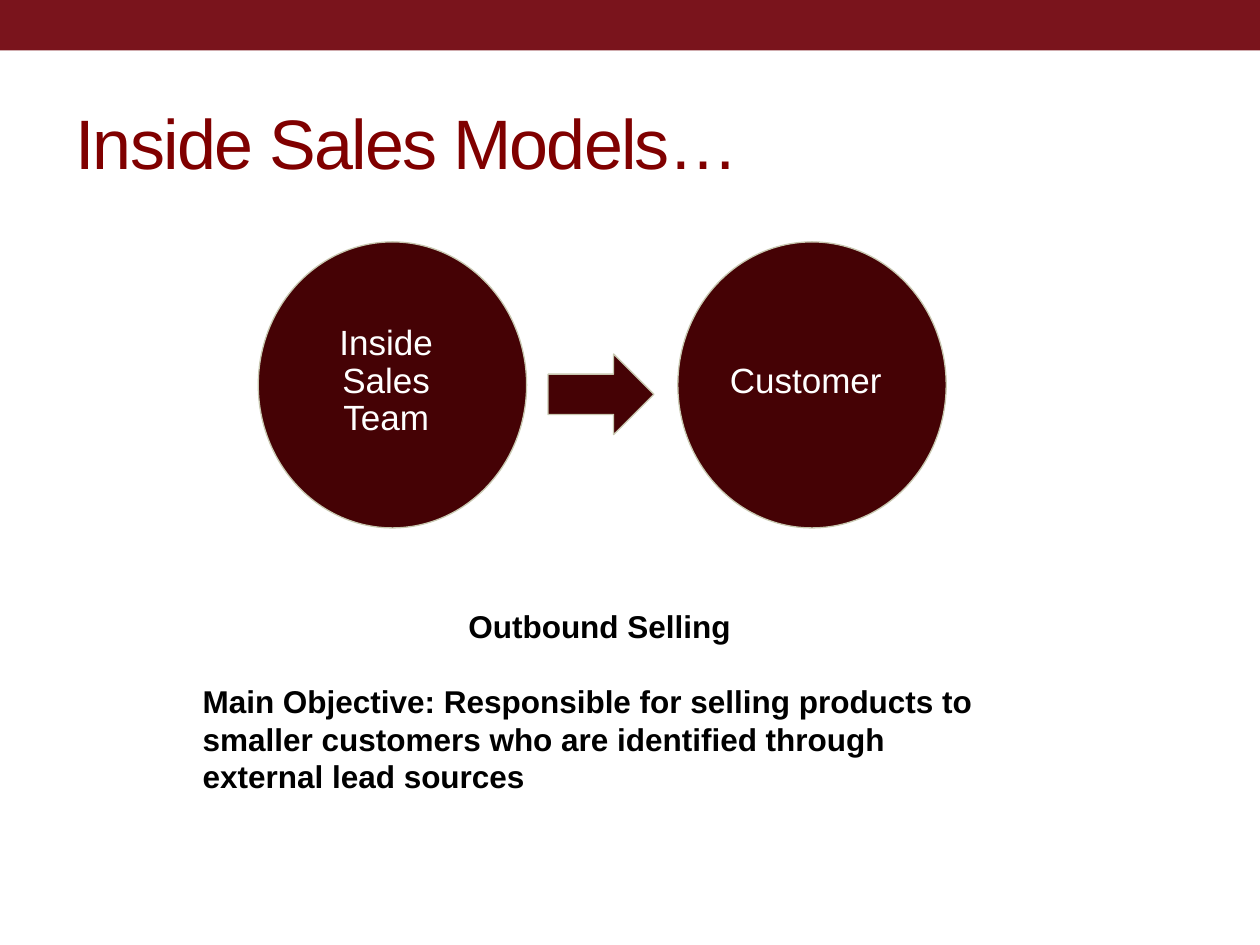
from pptx import Presentation
from pptx.dml.color import RGBColor
from pptx.enum.shapes import MSO_SHAPE
from pptx.enum.text import MSO_ANCHOR, PP_ALIGN
from pptx.util import Inches, Pt

BAND = RGBColor(0x7A, 0x14, 0x1C)
TITLE = RGBColor(0x80, 0x00, 0x00)
MAROON = RGBColor(0x45, 0x02, 0x05)
EDGE = RGBColor(0xC8, 0xC8, 0xB1)
WHITE = RGBColor(0xFF, 0xFF, 0xFF)
BLACK = RGBColor(0x00, 0x00, 0x00)

prs = Presentation()
prs.slide_width, prs.slide_height = Inches(10), Inches(7.5)
s = prs.slides.add_slide(prs.slide_layouts[6])


def add_shape(kind, x, y, w, h, fill, edge=None):
    sp = s.shapes.add_shape(kind, Inches(x), Inches(y), Inches(w), Inches(h))
    sp.shadow.inherit = False
    sp.fill.solid()
    sp.fill.fore_color.rgb = fill
    if edge is None:
        sp.line.fill.background()
    else:
        sp.line.color.rgb = edge
        sp.line.width = Pt(0.75)
    return sp


def add_run(p, text, size, color, bold=False):
    r = p.add_run()
    r.text = text
    r.font.name = "Arial"
    r.font.size = Pt(size)
    r.font.bold = bold
    r.font.color.rgb = color
    return r


add_shape(MSO_SHAPE.RECTANGLE, 0, 0, 10, 0.4, BAND)

tf = s.shapes.add_textbox(Inches(0.5), Inches(0.58), Inches(9), Inches(1.08)).text_frame
tf.word_wrap = True
tf.vertical_anchor = MSO_ANCHOR.MIDDLE
r = add_run(tf.paragraphs[0], "Inside Sales Models…", 40, TITLE)
r.font._element.set("spc", "-100")

left, top, step = 2.05, 1.92, 3.33
for col, label in enumerate(("Inside Sales Team", "Customer")):
    sp = add_shape(MSO_SHAPE.OVAL, left + col * step, top, 2.13, 2.27, MAROON, EDGE)
    tf = sp.text_frame
    tf.word_wrap = True
    tf.vertical_anchor = MSO_ANCHOR.MIDDLE
    tf.margin_left = tf.margin_top = 0
    tf.margin_right, tf.margin_bottom = Inches(0.1), Inches(0.05)
    p = tf.paragraphs[0]
    p.alignment = PP_ALIGN.CENTER
    p.line_spacing = 0.9
    add_run(p, label, 20, WHITE)

add_shape(MSO_SHAPE.RIGHT_ARROW, 4.35, 2.81, 0.84, 0.64, MAROON, EDGE)

tf = s.shapes.add_textbox(Inches(1.51), Inches(4.77), Inches(6.5), Inches(1.62)).text_frame
tf.word_wrap = True
p = tf.paragraphs[0]
p.alignment = PP_ALIGN.CENTER
p.space_after = Pt(21)
add_run(p, "Outbound Selling", 18, BLACK, True)
p = tf.add_paragraph()
p.alignment = PP_ALIGN.LEFT
add_run(p, "Main Objective: Responsible for selling products to smaller customers "
        "who are identified through external lead sources", 18, BLACK, True)

prs.save("out.pptx")
